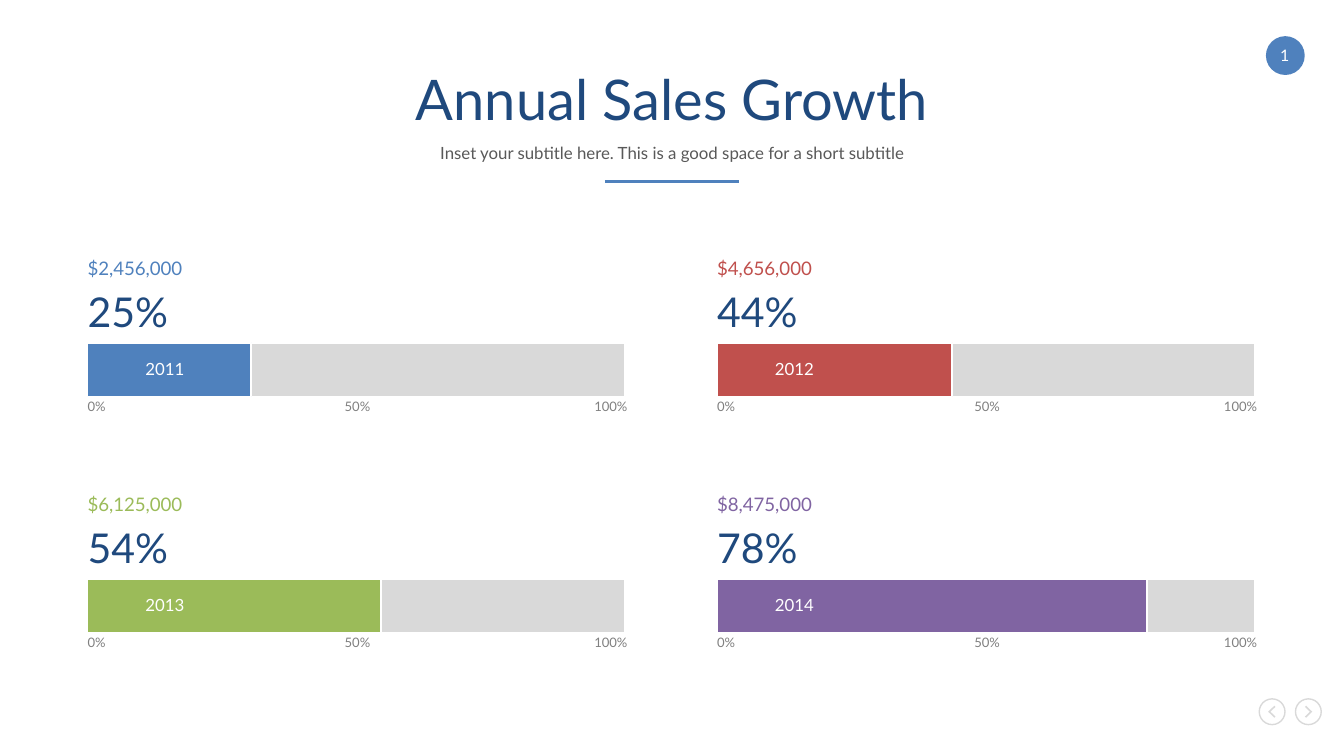
"""Build the annual sales growth slide with four progress bars."""
import pptx
import pptx.dml.color
import pptx.enum.shapes
import pptx.enum.text
import pptx.oxml
import pptx.oxml.ns
import pptx.util

Pt = pptx.util.Pt
SHAPE = pptx.enum.shapes.MSO_SHAPE
ALIGN = pptx.enum.text.PP_ALIGN
ANCHOR = pptx.enum.text.MSO_ANCHOR

COLORS = {
    "blue": "4F81BD", "red": "C0504D", "green": "9BBB59", "purple": "8064A2",
    "navy": "1F497D", "text": "595959", "scale": "808080",
    "track": "D9D9D9", "white": "FFFFFF",
}
FRAME = {
    "margin_left": 0, "margin_right": 0, "margin_top": 0, "margin_bottom": 0,
    "word_wrap": True, "auto_size": pptx.enum.text.MSO_AUTO_SIZE.NONE,
}


def rgb(name):
    return pptx.dml.color.RGBColor.from_string(COLORS[name])


class Deck:
    def __init__(self, width, height, font):
        self.prs = pptx.Presentation()
        self.prs.slide_width, self.prs.slide_height = Pt(width), Pt(height)
        self.font = font
        self.s = self.prs.slides.add_slide(self.prs.slide_layouts[5])
        self.shapes = self.s.shapes

    def start_group(self):
        self.shapes = self.s.shapes.add_group_shape().shapes

    def set_text(self, sp, text, size, color, align, anchor=ANCHOR.TOP):
        tf = sp.text_frame
        for key, value in {**FRAME, "vertical_anchor": anchor}.items():
            setattr(tf, key, value)
        p = tf.paragraphs[0]
        p.alignment = align
        r = p.add_run()
        r.text = text
        for key, value in {"name": self.font, "size": Pt(size)}.items():
            setattr(r.font, key, value)
        r.font.color.rgb = rgb(color)

    def title(self, x, y, w, h, text, size, color):
        sp = self.s.shapes.title
        box = {"left": x, "top": y, "width": w, "height": h}
        for key, value in box.items():
            setattr(sp, key, Pt(value))
        self.set_text(sp, text, size, color, ALIGN.CENTER, ANCHOR.MIDDLE)

    def text(self, x, y, w, h, text, size, color, align=ALIGN.LEFT, anchor=ANCHOR.TOP):
        sp = self.shapes.add_textbox(Pt(x), Pt(y), Pt(w), Pt(h))
        self.set_text(sp, text, size, color, align, anchor)

    def paint(self, sp, fill, line, weight):
        sp.shadow.inherit = False
        if fill:
            sp.fill.solid()
            sp.fill.fore_color.rgb = rgb(fill)
        else:
            sp.fill.background()
        if line:
            sp.line.color.rgb = rgb(line)
            sp.line.width = Pt(weight)
        else:
            sp.line.fill.background()

    def shape(self, kind, x, y, w, h, fill=None, line=None, weight=1):
        sp = self.shapes.add_shape(kind, Pt(x), Pt(y), Pt(w), Pt(h))
        self.paint(sp, fill, line, weight)

    def polygon(self, points, fill):
        points = [(Pt(x), Pt(y)) for x, y in points]
        builder = self.shapes.build_freeform(*points[0])
        builder.add_line_segments(points[1:], close=True)
        self.paint(builder.convert_to_shape(), fill, None, 0)

    def line(self, x1, y1, x2, y2, color, weight):
        kind = pptx.enum.shapes.MSO_CONNECTOR.STRAIGHT
        sp = self.shapes.add_connector(kind, Pt(x1), Pt(y1), Pt(x2), Pt(y2))
        sp.line.color.rgb = rgb(color)
        sp.line.width = Pt(weight)
        effects = pptx.oxml.parse_xml(
            "<a:effectLst %s/>" % pptx.oxml.ns.nsdecls("a"))
        sp._element.spPr.append(effects)

    def arrow_button(self, cx, cy, direction):
        self.shape(SHAPE.OVAL, cx - 6.9, cy - 6.9, 13.8, 13.8, None, "track", 0.75)
        chevron = [(-1.2, -3.2), (2.1, 0), (-1.2, 3.2),
                   (-1.8, 2.6), (0.9, 0), (-1.8, -2.6)]
        self.polygon([(cx + direction * dx, cy + dy) for dx, dy in chevron], "track")

    def progress(self, x, y, year, amount, percent, filled, color):
        self.start_group()
        self.shape(SHAPE.RECTANGLE, x, y, 288, 28.8, "track", "white")
        self.shape(SHAPE.RECTANGLE, x, y, filled, 28.8, color, "white")
        self.text(x, y - 30.4, 72.7, 28, percent, 22, "navy")
        self.text(x, y - 46, 57.6, 12.3, amount, 10, color)
        self.text(x + 23.4, y + 8.5, 36, 10.8, year, 9, "white", ALIGN.CENTER)
        marks = [("0%", ALIGN.LEFT), ("50%", ALIGN.CENTER), ("100%", ALIGN.RIGHT)]
        for i, (label, align) in enumerate(marks):
            self.text(x + 132 * i, y + 29.5, 25.2, 10, label, 7, "scale", align)


def main():
    deck = Deck(720, 405, "Lato")
    deck.line(324, 97.4, 396, 97.4, "blue", 1.5)
    deck.arrow_button(681.5, 381.3, -1)
    deck.arrow_button(700.9, 381.3, 1)
    deck.shape(SHAPE.OVAL, 678.2, 19.4, 20.8, 20.8, "blue")
    deck.text(679.7, 24.4, 17.3, 10.2, "1", 8.5, "white", ALIGN.CENTER)
    deck.title(46.8, 34.6, 626.4, 36, "Annual Sales Growth", 30, "navy")
    deck.text(46.8, 72.9, 626.4, 18,
              "Inset your subtitle here. This is a good space for a short subtitle",
              9, "text", ALIGN.CENTER, ANCHOR.MIDDLE)

    years = [
        ("2011", "$2,456,000", "25%", 87.8, "blue"),
        ("2012", "$4,656,000", "44%", 126, "red"),
        ("2013", "$6,125,000", "54%", 157, "green"),
        ("2014", "$8,475,000", "78%", 230.4, "purple"),
    ]
    for i, year in enumerate(years):
        row, col = divmod(i, 2)
        deck.progress(46.9 + 337.3 * col, 183.7 + 126.6 * row, *year)

    deck.prs.save("out.pptx")


if __name__ == "__main__":
    main()
